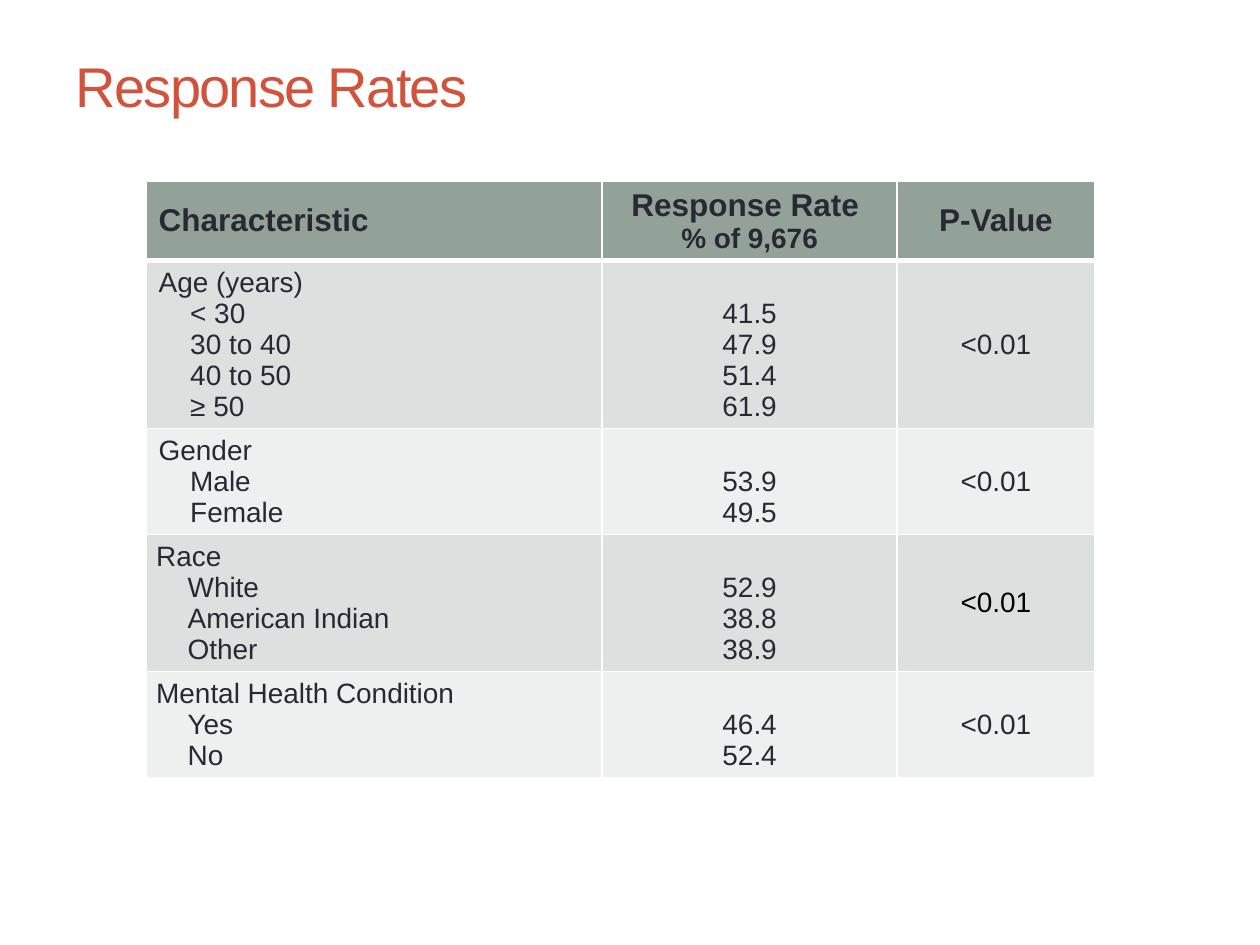
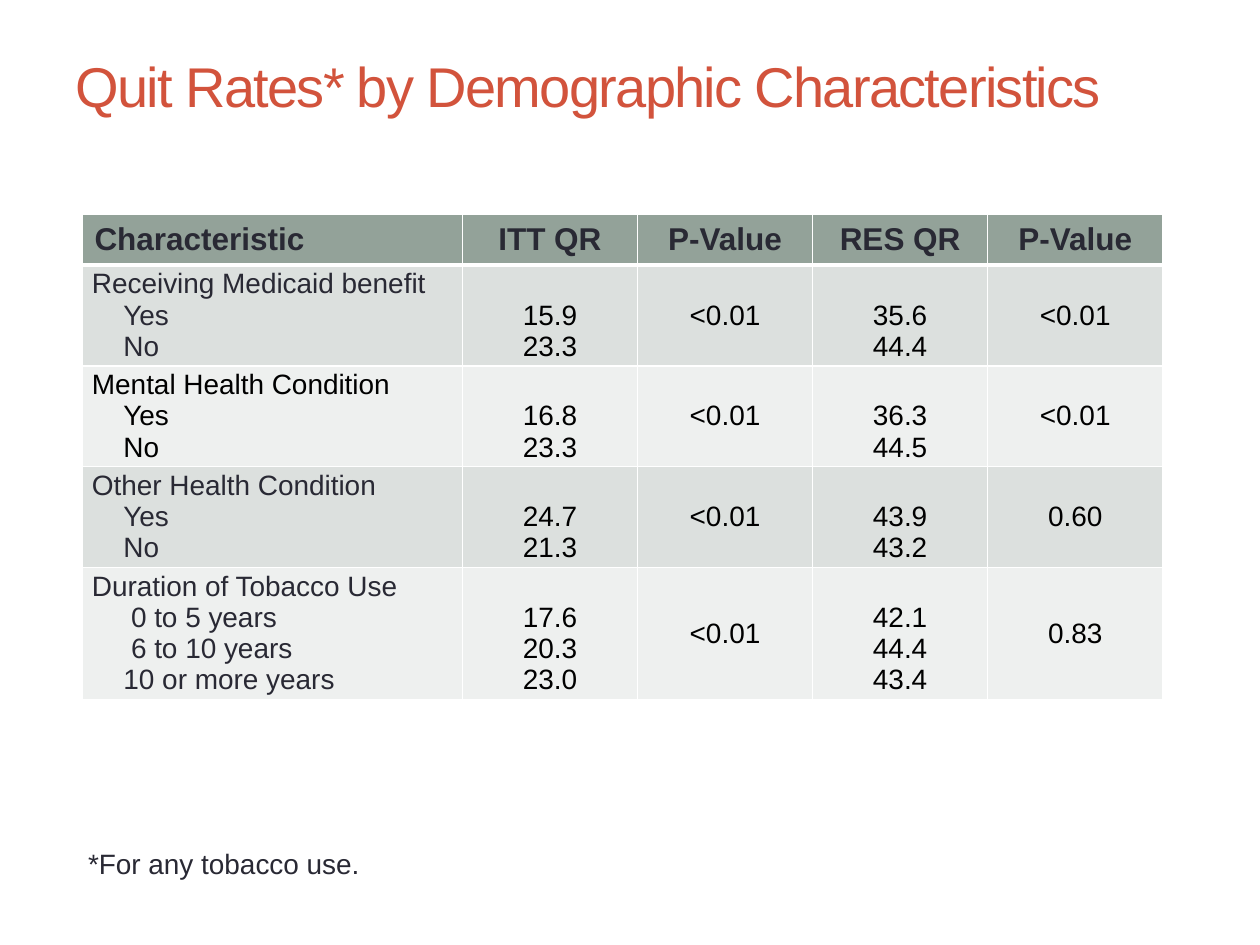
import dataclasses

import lxml.etree
import pptx
import pptx.dml.color
import pptx.enum.text
import pptx.oxml.ns
import pptx.util

SLIDE_WIDTH = pptx.util.Inches(10)
SLIDE_HEIGHT = pptx.util.Inches(7.5)
TITLE_ONLY_LAYOUT = 5

TITLE_RED = pptx.dml.color.RGBColor(0xD2, 0x53, 0x3C)
INK = pptx.dml.color.RGBColor(0x29, 0x29, 0x34)
BLACK = pptx.dml.color.RGBColor(0, 0, 0)
WHITE = pptx.dml.color.RGBColor(0xFF, 0xFF, 0xFF)
HEADER_GREEN = pptx.dml.color.RGBColor(0x93, 0xA2, 0x99)
BANDS = (
    pptx.dml.color.RGBColor(0xDC, 0xE0, 0xDE),
    pptx.dml.color.RGBColor(0xEE, 0xF0, 0xEF),
)

FONT = "Arial"
HEADER_SIZE = 18
BODY_SIZE = 16
LINE_HEIGHT = 0.245
INDENT = 0.25
DEEP_INDENT = 0.31

LEFT = pptx.enum.text.PP_ALIGN.LEFT
CENTER = pptx.enum.text.PP_ALIGN.CENTER
MIDDLE = pptx.enum.text.MSO_ANCHOR.MIDDLE
BOTTOM = pptx.enum.text.MSO_ANCHOR.BOTTOM


@dataclasses.dataclass
class Group:
    label: str
    items: list
    columns: list
    label_color: pptx.dml.color.RGBColor = INK
    rate_color: pptx.dml.color.RGBColor = INK
    p_value_color: pptx.dml.color.RGBColor = INK
    side_inset: float = 0.08
    inset: float = 0.05
    indents: tuple = ()


def across(share):
    return round(SLIDE_WIDTH * share)


def down(share):
    return round(SLIDE_HEIGHT * share)


def write(text_frame, text, size=BODY_SIZE, color=INK, bold=False,
          align=LEFT, indent=0, spacing=0):
    paragraph = text_frame.paragraphs[0]
    if paragraph.runs:
        paragraph = text_frame.add_paragraph()
    paragraph.alignment = align
    if indent:
        paragraph._p.get_or_add_pPr().set("marL", str(pptx.util.Inches(indent)))
    run = paragraph.add_run()
    run.text = text
    run.font.name = FONT
    run.font.size = pptx.util.Pt(size)
    run.font.bold = bold
    run.font.color.rgb = color
    if spacing:
        run._r.get_or_add_rPr().set("spc", str(spacing * 100))


def add_titled_slide(presentation, title):
    slide = presentation.slides.add_slide(presentation.slide_layouts[TITLE_ONLY_LAYOUT])
    shape = slide.shapes.title
    shape.left, shape.top = across(0.05), down(0.02)
    shape.width, shape.height = across(0.9), down(0.14)
    shape.text_frame.auto_size = pptx.enum.text.MSO_AUTO_SIZE.NONE
    shape.text_frame.vertical_anchor = MIDDLE
    write(shape.text_frame, title, size=32, color=TITLE_RED, spacing=-1)
    return slide


def add_borders(cell, widths):
    properties = cell._tc.get_or_add_tcPr()
    for side, width in widths.items():
        line = lxml.etree.SubElement(properties, pptx.oxml.ns.qn(f"a:ln{side}"))
        line.set("w", str(pptx.util.Pt(width)))
        fill = lxml.etree.SubElement(line, pptx.oxml.ns.qn("a:solidFill"))
        color = lxml.etree.SubElement(fill, pptx.oxml.ns.qn("a:srgbClr"))
        color.set("val", str(WHITE))


def format_cell(cell, fill, anchor=MIDDLE, side_inset=0.1, inset=0.05,
                top_line=1, bottom_line=1):
    add_borders(cell, {"L": 1, "R": 1, "T": top_line, "B": bottom_line})
    cell.fill.solid()
    cell.fill.fore_color.rgb = fill
    cell.vertical_anchor = anchor
    cell.margin_left = cell.margin_right = pptx.util.Inches(side_inset)
    cell.margin_top = cell.margin_bottom = pptx.util.Inches(inset)


def fill_header(table, headings):
    for column, lines in enumerate(headings):
        cell = table.cell(0, column)
        format_cell(cell, HEADER_GREEN, bottom_line=3)
        for line, size in zip(lines, (HEADER_SIZE, BODY_SIZE)):
            write(cell.text_frame, line, size=size, bold=True,
                  align=CENTER if column else LEFT)


def fill_group(table, row, group):
    look = {
        "fill": BANDS[(row - 1) % 2],
        "side_inset": group.side_inset,
        "inset": group.inset,
        "top_line": 3 if row == 1 else 1,
    }
    label_cell = table.cell(row, 0)
    format_cell(label_cell, **look)
    write(label_cell.text_frame, group.label, color=group.label_color)
    indents = group.indents or (INDENT,) * len(group.items)
    for item, indent in zip(group.items, indents):
        write(label_cell.text_frame, item, color=group.label_color, indent=indent)

    for column, entry in enumerate(group.columns, start=1):
        cell = table.cell(row, column)
        is_rates = isinstance(entry, list)
        format_cell(cell, anchor=BOTTOM if is_rates else MIDDLE, **look)
        color = group.rate_color if is_rates else group.p_value_color
        for value in entry if is_rates else [entry]:
            write(cell.text_frame, value, color=color, align=CENTER)


def add_rate_table(slide, left, top, column_shares, header_height, headings, groups):
    heights = [header_height] + [
        (len(group.items) + 1) * LINE_HEIGHT + 2 * group.inset for group in groups
    ]
    table = slide.shapes.add_table(
        len(heights), len(headings), across(left), down(top),
        across(sum(column_shares)), pptx.util.Inches(sum(heights)),
    ).table
    table.horz_banding = False
    for column, share in zip(table.columns, column_shares):
        column.width = across(share)
    for row, height in zip(table.rows, heights):
        row.height = pptx.util.Inches(height)
    fill_header(table, headings)
    for row, group in enumerate(groups, start=1):
        fill_group(table, row, group)


def add_footnote(slide, text):
    shape = slide.shapes.add_textbox(across(0.06), down(0.889), across(0.238), down(0.05))
    shape.text_frame.word_wrap = False
    write(shape.text_frame, text)


def build_response_rates(presentation):
    slide = add_titled_slide(presentation, "Response Rates")
    groups = [
        Group("Age (years)", ["< 30", "30 to 40", "40 to 50", "≥ 50"],
              [["41.5", "47.9", "51.4", "61.9"], "<0.01"], side_inset=0.1),
        Group("Gender", ["Male", "Female"], [["53.9", "49.5"], "<0.01"], side_inset=0.1),
        Group("Race", ["White", "American Indian", "Other"],
              [["52.9", "38.8", "38.9"], "<0.01"], p_value_color=BLACK),
        Group("Mental Health Condition", ["Yes", "No"], [["46.4", "52.4"], "<0.01"]),
    ]
    headings = [["Characteristic"], ["Response Rate ", "% of 9,676"], ["P-Value"]]
    add_rate_table(slide, 0.116, 0.192, [0.362, 0.234, 0.157], 0.62, headings, groups)


def build_quit_rates(presentation):
    slide = add_titled_slide(presentation, "Quit Rates* by Demographic Characteristics")
    look = {"rate_color": BLACK, "p_value_color": BLACK, "inset": 0.03}
    groups = [
        Group("Receiving Medicaid benefit", ["Yes", "No"],
              [["15.9", "23.3"], "<0.01", ["35.6", "44.4"], "<0.01"], **look),
        Group("Mental Health Condition", ["Yes", "No"],
              [["16.8", "23.3"], "<0.01", ["36.3", "44.5"], "<0.01"],
              label_color=BLACK, **look),
        Group("Other Health Condition", ["Yes", "No"],
              [["24.7", "21.3"], "<0.01", ["43.9", "43.2"], "0.60"], **look),
        Group("Duration of Tobacco Use",
              ["0 to 5 years", "6 to 10 years", "10 or more years"],
              [["17.6", "20.3", "23.0"], "<0.01", ["42.1", "44.4", "43.4"], "0.83"],
              indents=(DEEP_INDENT, DEEP_INDENT, INDENT), **look),
    ]
    headings = [["Characteristic"], ["ITT QR"], ["P-Value"], ["RES QR"], ["P-Value"]]
    add_rate_table(slide, 0.065, 0.227, [0.302] + [0.139] * 4, 0.4, headings, groups)
    add_footnote(slide, "*For any tobacco use.")


def main():
    presentation = pptx.Presentation()
    presentation.slide_width = SLIDE_WIDTH
    presentation.slide_height = SLIDE_HEIGHT
    build_response_rates(presentation)
    build_quit_rates(presentation)
    presentation.save("out.pptx")


if __name__ == "__main__":
    main()
